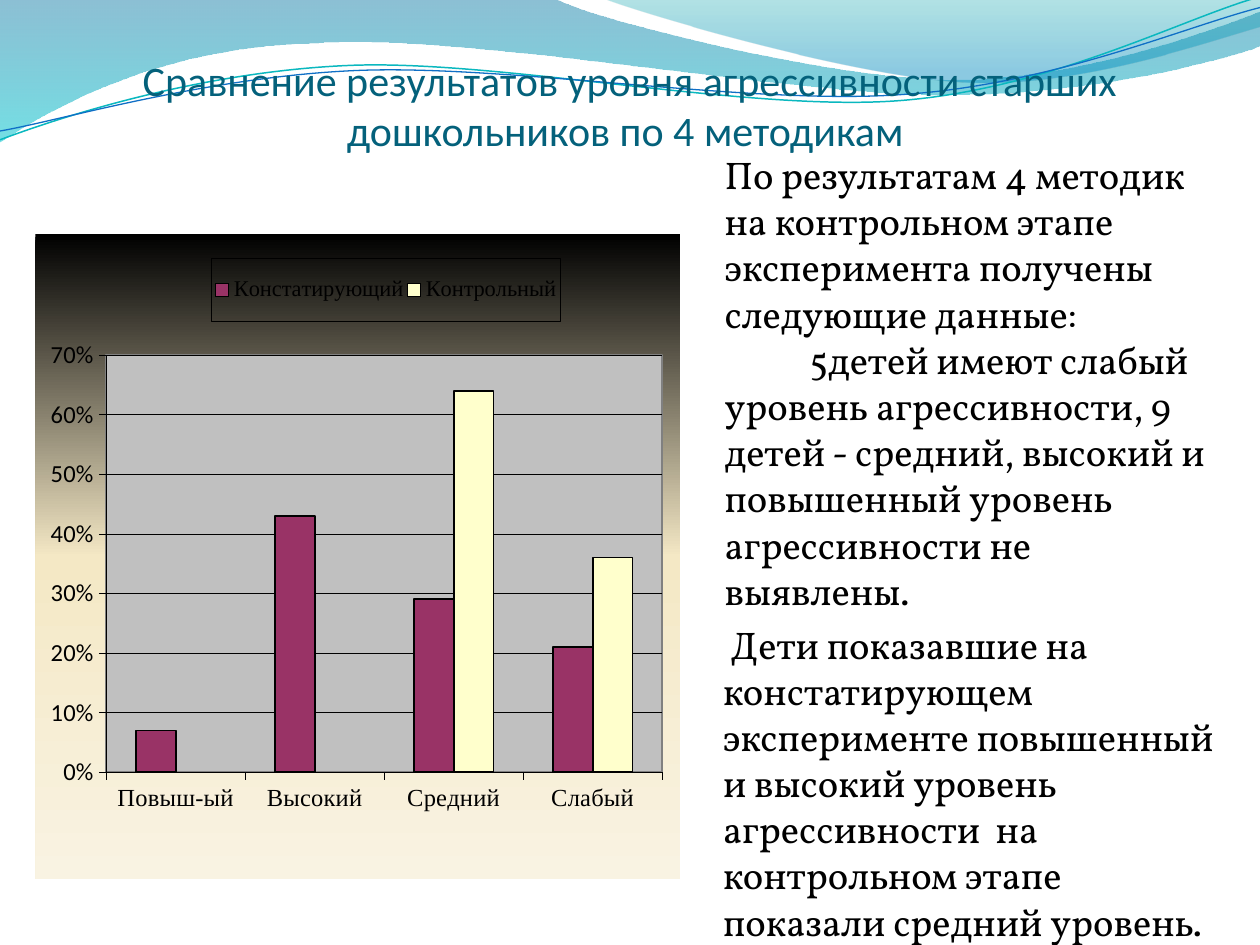
import pptx
import pptx.chart.data
import pptx.dml.color
import pptx.enum.chart
import pptx.enum.text
import pptx.oxml
import pptx.oxml.ns
import pptx.util
from dataclasses import dataclass

Pt = pptx.util.Pt
qn = pptx.oxml.ns.qn
COLS, ROWS = 40, 30


@dataclass(frozen=True)
class Theme:
    title: str = "04617B"
    ink: str = "000000"
    plot: str = "C0C0C0"
    plot_edge: str = "808080"
    bars: tuple = ("993366", "FFFFCC")
    # gradient stops: position, colour, opacity
    wave_left: tuple = ((0, "0074A1", 45), (100, "00C6CF", 55))
    wave_right: tuple = ((0, "00A1A9", 30), (80, "008BBF", 45))
    chart_back: tuple = ((0, "000000", 100), (50, "F4E8C5", 100), (100, "F9F3E2", 100))
    teal: str = "0AB8BF"
    blue: str = "0F6FC6"
    sans: str = "Calibri"
    serif: str = "Times New Roman"
    body: str = "Vollkorn"
    title_size: float = 24
    body_size: float = 22
    axis_size: float = 14
    legend_size: float = 12.8


T = Theme()


def rgb(value):
    return pptx.dml.color.RGBColor.from_string(value)


def grid_box(prs, col, row, cols, rows):
    w, h = prs.slide_width / COLS, prs.slide_height / ROWS
    return tuple(round(n) for n in (col * w, row * h, cols * w, rows * h))


def style_font(font, name, size, color):
    font.name, font.size, font.bold = name, Pt(size), False
    font.color.rgb = rgb(color)


def style_line(line, color, width):
    line.color.rgb = rgb(color)
    line.width = Pt(width)


def add_text(tf, text, font, size, color, align=None, before=0, left=0, first=0, new=True):
    p = tf.add_paragraph() if new else tf.paragraphs[0]
    p.alignment = align
    p.space_before = Pt(before)
    p_pr = p._p.get_or_add_pPr()
    p_pr.set("marL", str(round(left)))
    p_pr.set("indent", str(round(first)))
    r = p.add_run()
    r.text = text
    style_font(r.font, font, size, color)


def gradient(stops):
    """Return a top-to-bottom gradFill element."""
    ns = pptx.oxml.ns.nsdecls("a")
    gs = "".join(
        f'<a:gs pos="{pos * 1000}"><a:srgbClr val="{color}">'
        f'<a:alpha val="{alpha * 1000}"/></a:srgbClr></a:gs>'
        for pos, color, alpha in stops)
    return pptx.oxml.parse_xml(
        f'<a:gradFill {ns}><a:gsLst>{gs}</a:gsLst>'
        f'<a:lin ang="5400000" scaled="0"/></a:gradFill>')


def chart_sp_pr(fill=None, edge=None, width=0.25):
    """Return a c:spPr with an optional fill element and outline colour."""
    ns = pptx.oxml.ns.nsdecls("c", "a")
    outline = (f'<a:solidFill><a:srgbClr val="{edge}"/></a:solidFill>'
               if edge else '<a:noFill/>')
    sp_pr = pptx.oxml.parse_xml(
        f'<c:spPr {ns}><a:ln w="{Pt(width)}">{outline}</a:ln></c:spPr>')
    if fill is not None:
        sp_pr.insert(0, fill)
    return sp_pr


def chart_layout(x, y, w, h, inner=False):
    """Return a c:layout placed in percent of the chart."""
    ns = pptx.oxml.ns.nsdecls("c")
    target = '<c:layoutTarget val="inner"/>' if inner else ""
    return pptx.oxml.parse_xml(
        f'<c:layout {ns}><c:manualLayout>{target}'
        '<c:xMode val="edge"/><c:yMode val="edge"/>'
        f'<c:x val="{x / 100}"/><c:y val="{y / 100}"/>'
        f'<c:w val="{w / 100}"/><c:h val="{h / 100}"/>'
        '</c:manualLayout></c:layout>')


def bend_segments(sp, segments):
    """Join the three line steps of each 6-number segment into one Bezier curve."""
    steps = list(sp._element.spPr.iter(qn("a:lnTo")))
    for seg in segments:
        count = len(seg) // 2
        group, steps = steps[:count], steps[count:]
        if count == 3:
            curve = pptx.oxml.parse_xml(f'<a:cubicBezTo {pptx.oxml.ns.nsdecls("a")}/>')
            group[0].addprevious(curve)
            for step in group:
                curve.append(step[0])
                step.getparent().remove(step)


def add_waves(slide, box):
    """Draw the header waves; x is in tenths of the box width, y in box heights."""
    left, top, width, height = box
    areas = (
        (T.wave_left, (0, 0), (
            (4.4, -0.01), (4.76, 0.17, 6.64, 0.63, 7.58, 0.63),
            (8.53, 0.63, 9.58, 0.26, 10, 0.09), (10.01, 0.36),
            (9.83, 0.44, 8.7, 0.76, 7.46, 0.75), (6.22, 0.75, 3.82, 0.28, 2.57, 0.34),
            (1.29, 0.36, 0.46, 0.83, -0.01, 1.13))),
        (T.wave_right, (4.79, -0.01), (
            (5.09, 0.11, 6.82, 0.62, 7.69, 0.65), (8.56, 0.69, 9.61, 0.32, 10, 0.21),
            (10, 0))),
    )
    strokes = (
        (T.teal, 0.85, (0, 1.11), (
            (0.48, 0.93, 1.58, 0.57, 2.77, 0.52), (3.95, 0.47, 5.93, 0.89, 7.13, 0.8),
            (8.33, 0.71, 9.38, 0.15, 9.98, -0.02))),
        (T.blue, 0.75, (0, 1.04), (
            (0.47, 0.96, 1.64, 0.61, 2.83, 0.56), (4.03, 0.51, 5.97, 0.84, 7.17, 0.75),
            (8.36, 0.67, 9.41, 0.21, 10, 0.06))),
    )

    def outline(start, segments, close):
        pairs = [start] + [seg[i:i + 2] for seg in segments for i in range(0, len(seg), 2)]
        points = [(round(left + x * width / 10), round(top + y * height)) for x, y in pairs]
        builder = slide.shapes.build_freeform(*points[0])
        builder.add_line_segments(points[1:], close=close)
        sp = builder.convert_to_shape()
        bend_segments(sp, segments)
        sp.shadow.inherit = False
        sp.fill.background()
        return sp

    for stops, start, segments in areas:
        sp = outline(start, segments, True)
        sp.line.fill.background()
        no_fill = sp._element.spPr.find(qn("a:noFill"))
        sp._element.spPr.replace(no_fill, gradient(stops))
    for color, weight, start, segments in strokes:
        style_line(outline(start, segments, False).line, color, weight)


def add_title(slide, box):
    tf = slide.shapes.add_textbox(*box).text_frame
    tf.word_wrap = True
    tf.vertical_anchor = pptx.enum.text.MSO_ANCHOR.BOTTOM
    tf.margin_left = tf.margin_right = tf.margin_bottom = 0
    add_text(tf, "Сравнение результатов уровня агрессивности старших дошкольников по 4 методикам ",
             T.sans, T.title_size, T.title, new=False, align=pptx.enum.text.PP_ALIGN.CENTER)


def add_results_chart(slide, box):
    data = pptx.chart.data.CategoryChartData(number_format="0%")
    data.categories = ["Повыш-ый", "Высокий", "Средний", "Слабый"]
    data.add_series("Констатирующий", (0.07, 0.43, 0.29, 0.21))
    data.add_series("Контрольный", (None, None, 0.64, 0.36))
    kind = pptx.enum.chart.XL_CHART_TYPE.COLUMN_CLUSTERED
    chart = slide.shapes.add_chart(kind, *box, data).chart
    chart.has_title = False
    style_font(chart.font, T.sans, T.axis_size, T.ink)

    plot = chart.plots[0]
    plot.gap_width, plot.overlap, plot.vary_by_categories = 150, 0, False
    for series, color in zip(plot.series, T.bars):
        series.format.fill.solid()
        series.format.fill.fore_color.rgb = rgb(color)
        style_line(series.format.line, T.ink, 1)

    for axis, font in ((chart.category_axis, T.serif), (chart.value_axis, T.sans)):
        style_font(axis.tick_labels.font, font, T.axis_size, T.ink)
        style_line(axis.format.line, T.ink, 0.25)
        axis.major_tick_mark = pptx.enum.chart.XL_TICK_MARK.OUTSIDE
    values = chart.value_axis
    values.minimum_scale, values.maximum_scale, values.major_unit = 0, 0.7, 0.1
    values.tick_labels.number_format = "0%"
    values.tick_labels.number_format_is_linked = False
    style_line(values.major_gridlines.format.line, T.ink, 0.25)

    chart.has_legend = True
    legend = chart.legend
    legend.position = pptx.enum.chart.XL_LEGEND_POSITION.TOP
    legend.include_in_layout = False
    style_font(legend.font, T.serif, T.legend_size, T.ink)

    space, legend_el = chart._chartSpace, legend._element
    area = space.find(qn("c:chart")).find(qn("c:plotArea"))
    for parent in (area, legend_el):
        for old in parent.findall(qn("c:layout")):
            parent.remove(old)
    area.insert(0, chart_layout(11, 18.7, 86.2, 64.7, inner=True))
    solid = pptx.oxml.parse_xml(
        f'<a:solidFill {pptx.oxml.ns.nsdecls("a")}><a:srgbClr val="{T.plot}"/></a:solidFill>')
    area.append(chart_sp_pr(solid, T.plot_edge, 1))
    legend_el.find(qn("c:legendPos")).addnext(chart_layout(27.3, 3.7, 54.1, 9.8))
    legend_el.find(qn("c:txPr")).addprevious(chart_sp_pr(edge=T.ink))
    space.find(qn("c:txPr")).addprevious(chart_sp_pr(gradient(T.chart_back)))


def add_findings(slide, box):
    col = box[2] / 17
    tf = slide.shapes.add_textbox(*box).text_frame
    tf.word_wrap = True
    style = dict(font=T.body, size=T.body_size, color=T.ink)
    add_text(tf, "По результатам 4 методик на контрольном этапе эксперимента получены "
             "следующие данные:", new=False, left=0.41 * col, **style)
    add_text(tf, "5детей имеют слабый уровень агрессивности, 9 детей - средний, высокий и "
             "повышенный уровень агрессивности не выявлены.",
             left=0.41 * col, first=2.7 * col, **style)
    add_text(tf, "Дети показавшие на констатирующем эксперименте повышенный и высокий уровень "
             "агрессивности  на контрольном этапе показали средний уровень.",
             before=0.2 * T.body_size, left=0.36 * col, first=0.24 * col, **style)


def main():
    prs = pptx.Presentation()
    prs.slide_width, prs.slide_height = pptx.util.Inches(10), pptx.util.Inches(7.5)
    s = prs.slides.add_slide(prs.slide_layouts[6])
    add_waves(s, grid_box(prs, 0, 0, COLS, 4))
    add_title(s, grid_box(prs, 2, 0.84, 36, 4.08))
    add_results_chart(s, grid_box(prs, 1.12, 7.44, 20.48, 20.48))
    add_findings(s, grid_box(prs, 22.2, 4.6, 17, 24.24))
    prs.save("out.pptx")


if __name__ == "__main__":
    main()
